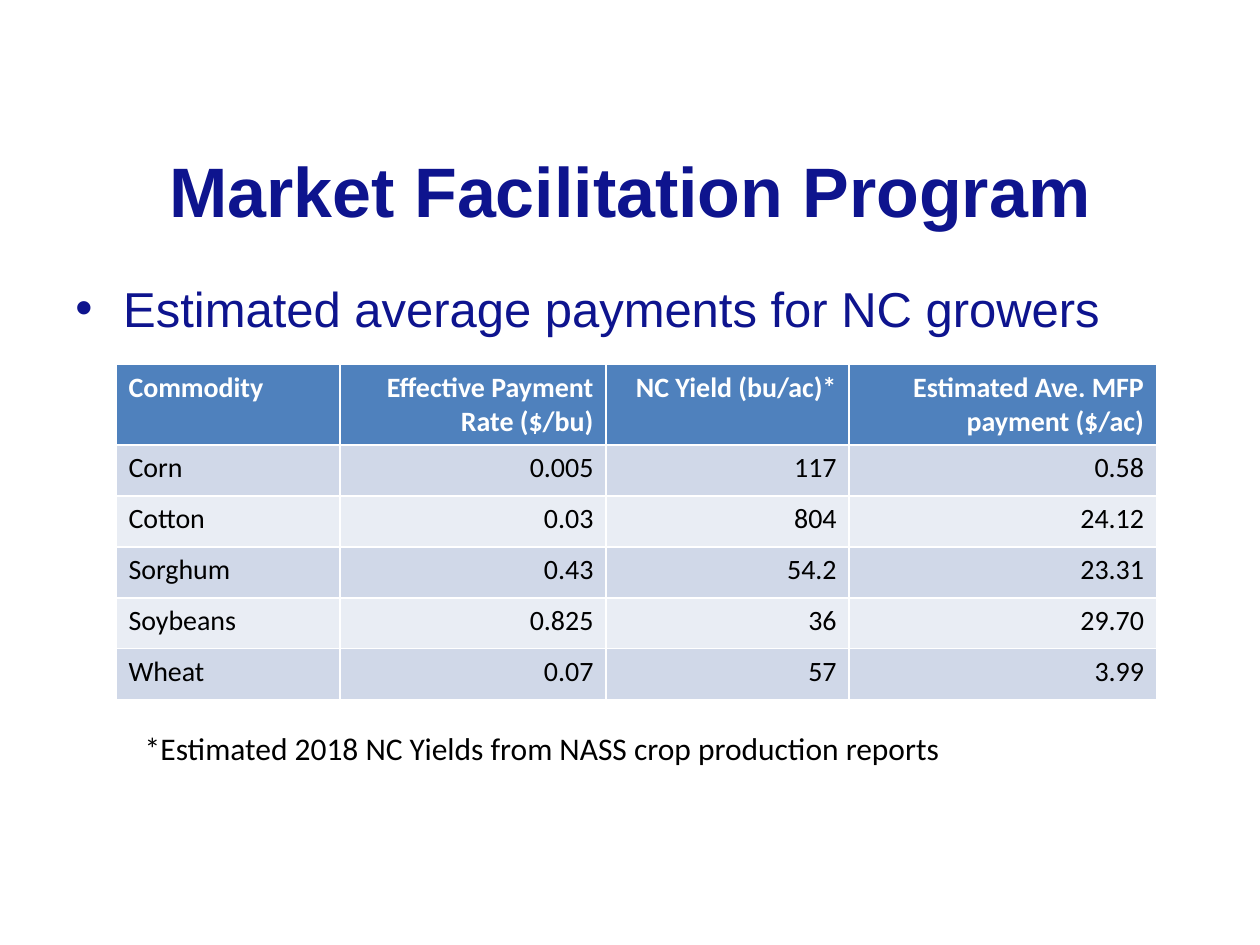
from lxml import etree
from pptx import Presentation
from pptx.dml.color import RGBColor
from pptx.enum import text
from pptx.oxml import ns
from pptx.util import Inches, Pt

COLORS = {
    "navy": "0E148E",
    "header": "4F81BD",
    "band_dark": "D0D8E8",
    "band_light": "E9EDF4",
    "white": "FFFFFF",
    "black": "000000",
}


def style(paragraph, font_name, size, color, bold=False):
    font = paragraph.font
    font.name = font_name
    font.size = Pt(size)
    font.bold = bold
    font.color.rgb = RGBColor.from_string(COLORS[color])


def add_text(slide, left, top, width, height, wording):
    box = slide.shapes.add_textbox(Inches(left), Inches(top), Inches(width), Inches(height))
    box.text_frame.word_wrap = True
    box.text_frame.text = wording
    return box.text_frame


presentation = Presentation()
presentation.slide_width = Inches(10)
presentation.slide_height = Inches(7.5)
slide = presentation.slides.add_slide(presentation.slide_layouts[5])

# Title
title = slide.shapes.title
title.left, title.top = Inches(0.5), Inches(1.14)
title.width, title.height = Inches(9), Inches(0.73)
title.text_frame.text = "Market Facilitation Program"
title.text_frame.vertical_anchor = text.MSO_ANCHOR.MIDDLE
title.text_frame.paragraphs[0].alignment = text.PP_ALIGN.CENTER
style(title.text_frame.paragraphs[0], "Arial", 40, "navy", bold=True)

# Bullet line
bullet_frame = add_text(slide, 0.5, 2.11, 9, 0.7, "Estimated average payments for NC growers")
bullet_frame.margin_top = Inches(0.1)
bullet = bullet_frame.paragraphs[0]
properties = bullet._p.get_or_add_pPr()
properties.set("marL", str(Inches(0.38)))
properties.set("indent", str(-Inches(0.38)))
etree.SubElement(properties, ns.qn("a:buFont")).set("typeface", "Arial")
etree.SubElement(properties, ns.qn("a:buChar")).set("char", "•")
style(bullet, "Arial", 28, "navy")

# Payment table
rows = [
    ("Commodity", "Effective Payment Rate ($/bu)", "NC Yield (bu/ac)*", "Estimated Ave. MFP payment ($/ac)"),
    ("Corn", "0.005", "117", "0.58"),
    ("Cotton", "0.03", "804", "24.12"),
    ("Sorghum", "0.43", "54.2", "23.31"),
    ("Soybeans", "0.825", "36", "29.70"),
    ("Wheat", "0.07", "57", "3.99"),
]
column_widths = [1.78, 2.11, 1.93, 2.44]
table = slide.shapes.add_table(
    len(rows), len(column_widths), Inches(0.92), Inches(2.89), Inches(8.26), Inches(2.66)
).table
for column, width in zip(table.columns, column_widths):
    column.width = Inches(width)

for row_index, values in enumerate(rows):
    is_header = row_index == 0
    table.rows[row_index].height = Inches(0.64 if is_header else 0.405)
    fill = "header" if is_header else "band_dark" if row_index % 2 else "band_light"
    for column_index, value in enumerate(values):
        cell = table.cell(row_index, column_index)
        cell.text = value
        cell.fill.solid()
        cell.fill.fore_color.rgb = RGBColor.from_string(COLORS[fill])
        paragraph = cell.text_frame.paragraphs[0]
        paragraph.alignment = text.PP_ALIGN.RIGHT if column_index else text.PP_ALIGN.LEFT
        style(paragraph, "Calibri", 16, "white" if is_header else "black", bold=is_header)

# Footnote
footnote_frame = add_text(
    slide, 1.05, 5.74, 7.22, 0.4, "*Estimated 2018 NC Yields from NASS crop production reports"
)
style(footnote_frame.paragraphs[0], "Calibri", 18, "black")

presentation.save("out.pptx")
